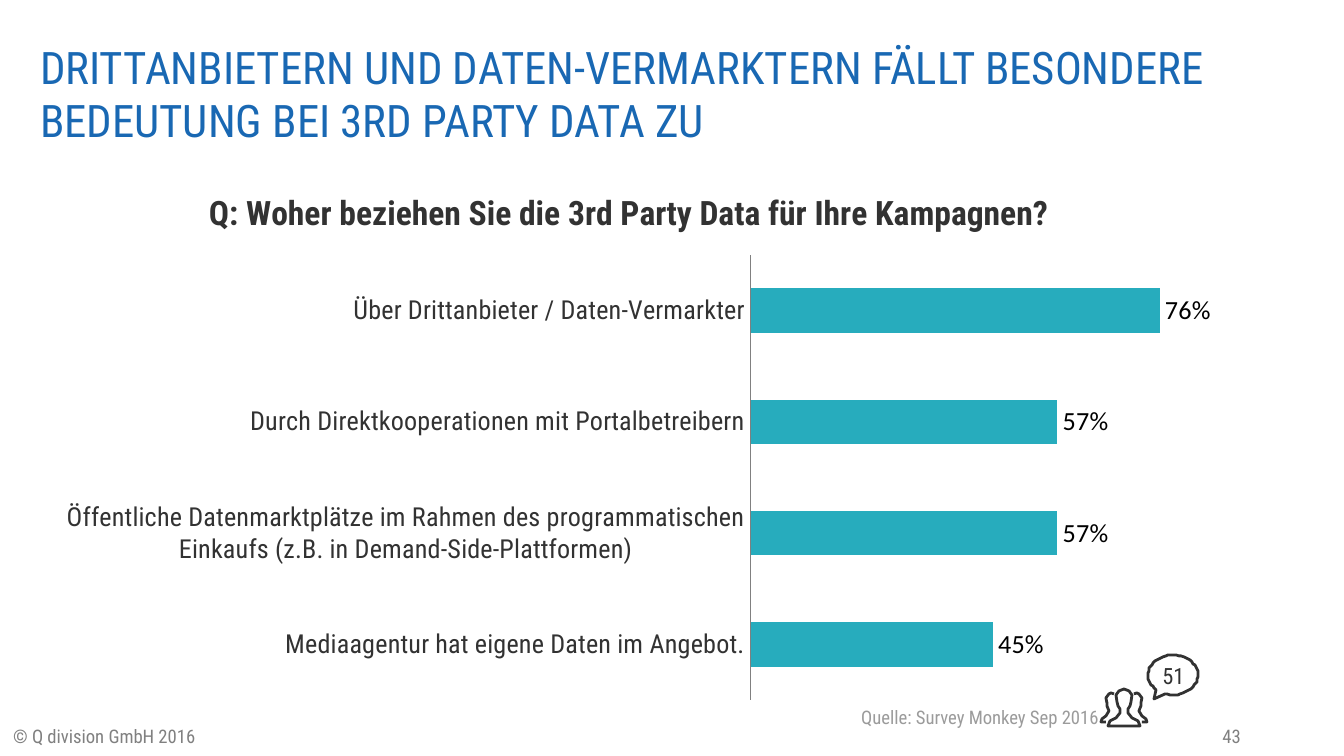
import math

from lxml import etree
from pptx import Presentation
from pptx.chart.data import CategoryChartData
from pptx.dml.color import RGBColor
from pptx.enum.chart import XL_CHART_TYPE, XL_LABEL_POSITION, XL_TICK_MARK
from pptx.enum.text import MSO_ANCHOR, MSO_AUTO_SIZE, PP_ALIGN
from pptx.oxml.ns import qn
from pptx.util import Pt

EMU_PER_PX = 914400 / 134.4
LEFT, CENTER, RIGHT = PP_ALIGN.LEFT, PP_ALIGN.CENTER, PP_ALIGN.RIGHT
BAR = XL_CHART_TYPE.BAR_CLUSTERED
OUTSIDE = XL_LABEL_POSITION.OUTSIDE_END
NO_TICKS = XL_TICK_MARK.NONE

FONT = "Roboto Condensed"
LABEL_FONT = "Calibri"
DARK, GRAY, LIGHT_GRAY = "323232", "808080", "9B9B9B"
BLUE, TEAL, BLACK = "1968B3", "27ACBD", "000000"

ANSWERS = [
    ("Mediaagentur hat eigene Daten im Angebot.", 0.45),
    ("Öffentliche Datenmarktplätze im Rahmen des programmatischen "
     "Einkaufs (z.B. in Demand-Side-Plattformen)", 0.57),
    ("Durch Direktkooperationen mit Portalbetreibern", 0.57),
    ("Über Drittanbieter / Daten-Vermarkter", 0.76),
]

# Outlines as (distance from the middle of the group, y)
FRONT_HALF = [(0, 689), (5, 691), (8, 695), (7, 702), (6, 706), (4, 709),
              (4, 713), (8, 718), (14, 721), (16, 726)]
BACK_PERSON = [(10, 694), (13, 693), (15, 694), (18, 698), (17, 703), (17, 706),
               (15, 711), (18, 716), (22, 719), (23, 722), (18, 722)]


def px(length):
    return round(length * EMU_PER_PX)


def color(code):
    return RGBColor.from_string(code)


def style_font(font, size, code, name=FONT, bold=False):
    font.size = Pt(size)
    font.color.rgb = color(code)
    font.name = name
    font.bold = bold


def place(shape, left, top, width, height):
    shape.left, shape.top = px(left), px(top)
    shape.width, shape.height = px(width), px(height)


def write(para, text, size, code, align=LEFT, bold=False):
    para.alignment = align
    span = para.add_run()
    span.text = text
    style_font(span.font, size, code, bold=bold)


def add_title(page, text):
    title = page.shapes.title
    place(title, 2, 52, 1241, 82)
    frame = title.text_frame
    frame.auto_size = MSO_AUTO_SIZE.NONE
    frame.word_wrap = True
    frame.vertical_anchor = MSO_ANCHOR.MIDDLE
    frame.margin_top = frame.margin_right = frame.margin_bottom = 0
    frame.margin_left = px(38)
    write(frame.paragraphs[0], text, 24, BLUE)


def add_text(page, area, text, size, code, align=LEFT, wrap=True):
    box = page.shapes.add_textbox(*map(px, area))
    box.text_frame.word_wrap = wrap
    write(box.text_frame.paragraphs[0], text, size, code, align)


def add_outline(page, points, close=True):
    builder = page.shapes.build_freeform(*points[0], scale=EMU_PER_PX)
    builder.add_line_segments(points[1:], close=close)
    shape = builder.convert_to_shape()
    shape.shadow.inherit = False
    shape.fill.background()
    shape.line.color.rgb = color(DARK)
    shape.line.width = Pt(1.5)


def set_plot_area(chart, x, y, w, h):
    """Fix the inner plot area, in fractions of the chart."""
    plot_area = chart.plots[0]._element.getparent()
    for old in plot_area.findall(qn("c:layout")):
        plot_area.remove(old)
    layout = etree.Element(qn("c:layout"))
    manual = etree.SubElement(layout, qn("c:manualLayout"))
    settings = [("layoutTarget", "inner"), ("xMode", "edge"), ("yMode", "edge"),
                ("x", x), ("y", y), ("w", w), ("h", h)]
    for tag, value in settings:
        etree.SubElement(manual, qn("c:" + tag)).set("val", str(value))
    plot_area.insert(0, layout)


def add_bar_chart(page):
    data = CategoryChartData(number_format="0%")
    data.categories = [answer for answer, _ in ANSWERS]
    data.add_series("Series 1", [share for _, share in ANSWERS])
    area = map(px, (47, 167, 1164, 544))
    chart = page.shapes.add_chart(BAR, *area, data).chart
    style_font(chart.font, 18, BLACK, LABEL_FONT)
    chart.has_legend = False
    chart.has_title = True
    write(chart.chart_title.text_frame.paragraphs[0],
          "Q: Woher beziehen Sie die 3rd Party Data für Ihre Kampagnen?",
          18, DARK, CENTER, bold=True)

    # Axes
    answers = chart.category_axis
    answers.major_tick_mark = answers.minor_tick_mark = NO_TICKS
    answers.format.line.color.rgb = color(GRAY)
    answers.format.line.width = Pt(0.75)
    style_font(answers.tick_labels.font, 14, DARK)
    shares = chart.value_axis
    shares.minimum_scale, shares.maximum_scale = 0, 0.8
    shares.has_major_gridlines = False
    shares.tick_labels.number_format = "0.00%"
    shares.tick_labels.number_format_is_linked = False
    shares.visible = False

    # Bars and their labels
    plot = chart.plots[0]
    plot.gap_width = 150
    plot.vary_by_categories = False
    fill = plot.series[0].format.fill
    fill.solid()
    fill.fore_color.rgb = color(TEAL)
    plot.has_data_labels = True
    labels = plot.data_labels
    labels.show_value = True
    labels.number_format = "0%"
    labels.number_format_is_linked = False
    labels.position = OUTSIDE
    style_font(labels.font, 14, BLACK, LABEL_FONT)
    set_plot_area(chart, 0.605, 0.162, 0.37, 0.818)


def add_bubble(page, x, y):
    rim = [math.radians(angle) for angle in range(133, 470, 6)]
    points = [(x + 25 * math.cos(a), y + 20 * math.sin(a)) for a in rim]
    add_outline(page, points + [(x - 19, y + 24)])


def add_people(page, middle):
    left_half = [(middle - x, y) for x, y in FRONT_HALF]
    right_half = [(middle + x, y) for x, y in FRONT_HALF[:0:-1]]
    add_outline(page, left_half + right_half)
    for side in (-1, 1):
        add_outline(page, [(middle + side * x, y) for x, y in BACK_PERSON], close=False)


def main():
    deck = Presentation()
    deck.slide_width, deck.slide_height = px(1344), px(756)
    page = deck.slides.add_slide(deck.slide_layouts[5])

    # Footer
    add_text(page, (1159, 718, 95, 36), "43", 10, GRAY, RIGHT)
    add_text(page, (0, 718, 360, 36), "© Q division GmbH 2016", 10, GRAY)

    # Title and survey result
    add_title(page, "DRITTANBIETERN UND DATEN-VERMARKTERN FÄLLT BESONDERE "
                    "BEDEUTUNG BEI 3RD PARTY DATA ZU")
    add_bar_chart(page)

    # Number of respondents and source
    add_bubble(page, 1173, 675)
    add_text(page, (1146, 656, 55, 40), "51", 12, DARK, CENTER)
    add_people(page, 1124)
    add_text(page, (848, 699, 269, 36), "Quelle: Survey Monkey Sep 2016",
             10, LIGHT_GRAY, wrap=False)

    deck.save("out.pptx")


if __name__ == "__main__":
    main()
